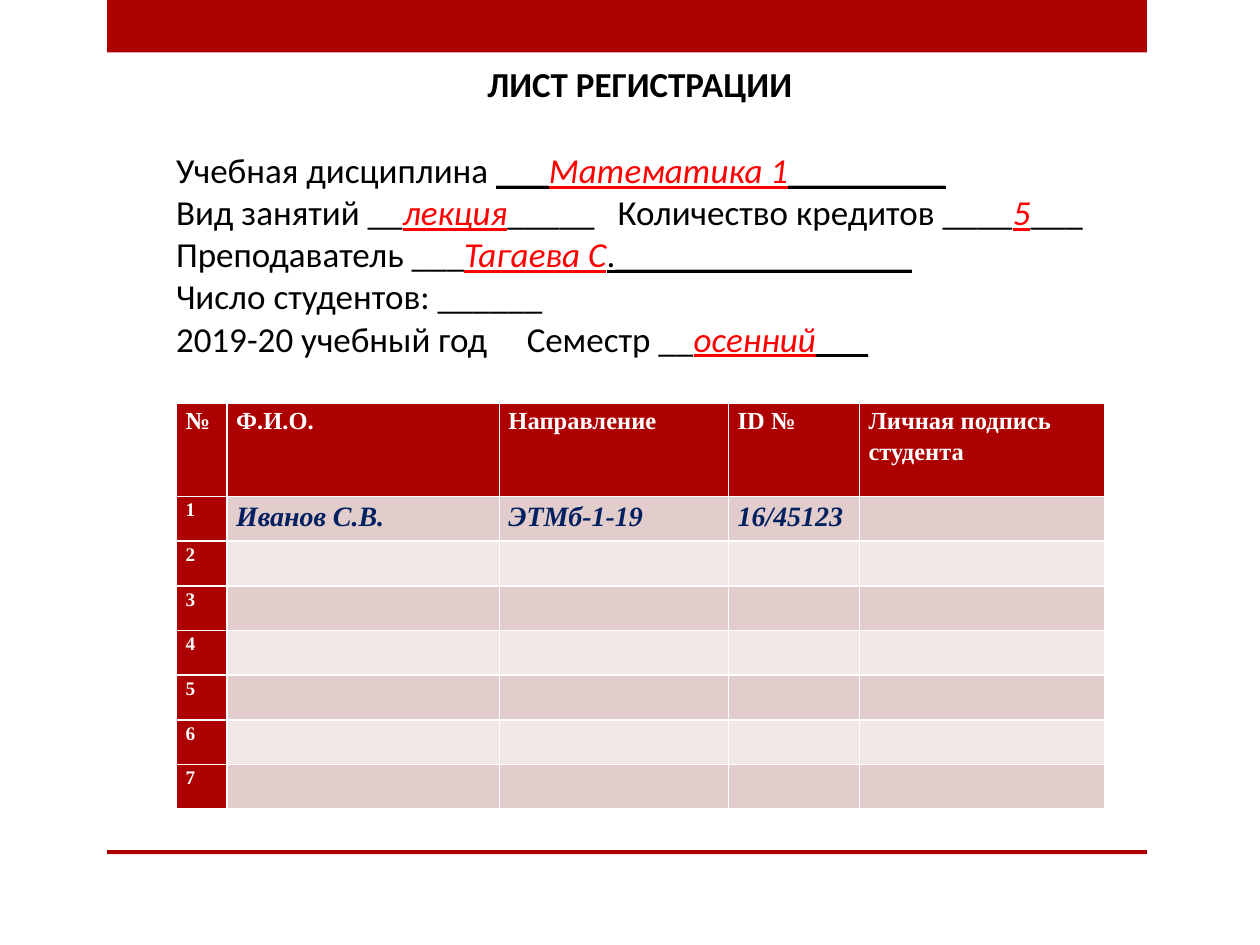
from dataclasses import dataclass
from typing import NamedTuple

from lxml.etree import SubElement
from pptx import Presentation
from pptx.dml.color import RGBColor
from pptx.enum.shapes import MSO_SHAPE
from pptx.enum.text import MSO_ANCHOR, MSO_AUTO_SIZE, PP_ALIGN
from pptx.oxml.ns import qn
from pptx.slide import Slide
from pptx.table import _Cell
from pptx.text.text import TextFrame
from pptx.util import Cm, Length, Pt


@dataclass(frozen=True)
class Theme:
    accent: RGBColor = RGBColor(0xAD, 0x01, 0x01)
    ink: RGBColor = RGBColor(0, 0, 0)
    answer: RGBColor = RGBColor(0xFF, 0, 0)
    white: RGBColor = RGBColor(0xFF, 0xFF, 0xFF)
    entry: RGBColor = RGBColor(0, 0x20, 0x60)
    dark_band: RGBColor = RGBColor(0xE3, 0xCC, 0xCC)
    light_band: RGBColor = RGBColor(0xF1, 0xE7, 0xE7)
    form_font: str = "Calibri"
    table_font: str = "Times New Roman"
    form_size: Length = Pt(20)
    header_size: Length = Pt(14)
    number_size: Length = Pt(11)
    entry_size: Length = Pt(16)


class Span(NamedTuple):
    text: str
    answer: bool = False
    underline: bool = False


class FormLine(NamedTuple):
    spans: list[Span]
    tab: Length | None = None


class Bar(NamedTuple):
    top: Length
    height: Length


class Column(NamedTuple):
    heading: str
    width: Length
    entry: str


THEME = Theme()
TEXT_LEFT, TEXT_WIDTH = Cm(3.3), Cm(19.2)
BARS = [Bar(Cm(0), Cm(1.06)), Bar(Cm(17.14), Cm(0.08))]


def answer(text: str) -> Span:
    return Span(text, answer=True, underline=True)


FORM = [
    FormLine([Span("Учебная дисциплина "), Span("___", underline=True),
              answer("Математика 1"), Span("_________", underline=True)]),
    FormLine([Span("Вид занятий __"), answer("лекция"),
              Span("_____\tКоличество кредитов ____"), answer("5"), Span("___")],
             tab=Cm(8.9)),
    FormLine([Span("Преподаватель ___"), answer("Тагаева С"),
              Span("._________________", underline=True)]),
    FormLine([Span("Число студентов: ______")]),
    FormLine([Span("2019-20 учебный год\tСеместр __"), answer("осенний"),
              Span("___", underline=True)], tab=Cm(7.07)),
]
COLUMNS = [
    Column("№", Cm(1.02), "1"),
    Column("Ф.И.О.", Cm(5.49), "Иванов С.В."),
    Column("Направление", Cm(4.62), "ЭТМб-1-19"),
    Column("ID №", Cm(2.64), "16/45123"),
    Column("Личная подпись студента", Cm(4.95), ""),
]
STUDENT_ROWS = 7
HEADER_HEIGHT, ROW_HEIGHT = Cm(1.88), Cm(0.9)


def add_bar(page: Slide, bar: Bar) -> None:
    shape = page.shapes.add_shape(
        MSO_SHAPE.RECTANGLE, Cm(2.16), bar.top, Cm(20.96), bar.height)
    shape.shadow.inherit = False
    shape.fill.solid()
    shape.fill.fore_color.rgb = THEME.accent
    shape.line.fill.background()


def prepare_frame(frame: TextFrame) -> None:
    frame.word_wrap = True
    frame.auto_size = MSO_AUTO_SIZE.NONE
    frame.vertical_anchor = MSO_ANCHOR.MIDDLE


def set_title(page: Slide, text: str) -> None:
    title = page.shapes.title
    title.left, title.top = TEXT_LEFT, Cm(1.12)
    title.width, title.height = TEXT_WIDTH, Cm(1.12)
    prepare_frame(title.text_frame)
    title.text_frame.text = text
    para = title.text_frame.paragraphs[0]
    para.alignment = PP_ALIGN.CENTER
    para.font.name, para.font.size = THEME.form_font, THEME.form_size
    para.font.bold = True
    para.font.color.rgb = THEME.ink


def add_form(page: Slide, lines: list[FormLine]) -> None:
    box = page.shapes.add_textbox(TEXT_LEFT, Cm(2.84), TEXT_WIDTH, Cm(4.56))
    frame = box.text_frame
    prepare_frame(frame)
    for index, line in enumerate(lines):
        para = frame.add_paragraph() if index else frame.paragraphs[0]
        if line.tab is not None:
            tabs = SubElement(para._p.get_or_add_pPr(), qn("a:tabLst"))
            SubElement(tabs, qn("a:tab"), pos=str(int(line.tab)), algn="l")
        para.font.name, para.font.size = THEME.form_font, THEME.form_size
        for span in line.spans:
            run = para.add_run()
            run.text = span.text
            run.font.italic = span.answer
            run.font.underline = span.underline
            run.font.color.rgb = THEME.answer if span.answer else THEME.ink


def fill_cell(cell: _Cell, text: str, fill: RGBColor, size: Length,
              color: RGBColor, italic: bool = False) -> None:
    cell.fill.solid()
    cell.fill.fore_color.rgb = fill
    cell.margin_left = cell.margin_right = Cm(0.18)
    cell.margin_top = cell.margin_bottom = 0
    cell.text = text
    para = cell.text_frame.paragraphs[0]
    para.line_spacing = 1.15
    para.font.name, para.font.size = THEME.table_font, size
    para.font.bold, para.font.italic = True, italic
    para.font.color.rgb = color


def add_student_table(page: Slide) -> None:
    """The default table style supplies the white rules between the cells."""
    table = page.shapes.add_table(
        STUDENT_ROWS + 1, len(COLUMNS), Cm(3.56), Cm(8.13),
        sum(column.width for column in COLUMNS),
        HEADER_HEIGHT + STUDENT_ROWS * ROW_HEIGHT).table
    table.first_col = True
    table.rows[0].height = HEADER_HEIGHT
    for number in range(1, STUDENT_ROWS + 1):
        table.rows[number].height = ROW_HEIGHT
    for index, column in enumerate(COLUMNS):
        table.columns[index].width = column.width
        fill_cell(table.cell(0, index), column.heading, THEME.accent,
                  THEME.header_size, THEME.white)
        for number in range(1, STUDENT_ROWS + 1):
            cell = table.cell(number, index)
            if index == 0:
                fill_cell(cell, str(number), THEME.accent,
                          THEME.number_size, THEME.white)
            else:
                band = THEME.dark_band if number % 2 else THEME.light_band
                fill_cell(cell, column.entry if number == 1 else "", band,
                          THEME.entry_size, THEME.entry, italic=True)


def main() -> None:
    deck = Presentation()
    deck.slide_width, deck.slide_height = Cm(25.4), Cm(19.05)
    page = deck.slides.add_slide(deck.slide_layouts[5])
    for bar in BARS:
        add_bar(page, bar)
    set_title(page, "ЛИСТ РЕГИСТРАЦИИ")
    add_form(page, FORM)
    add_student_table(page)
    deck.save("out.pptx")


if __name__ == "__main__":
    main()
